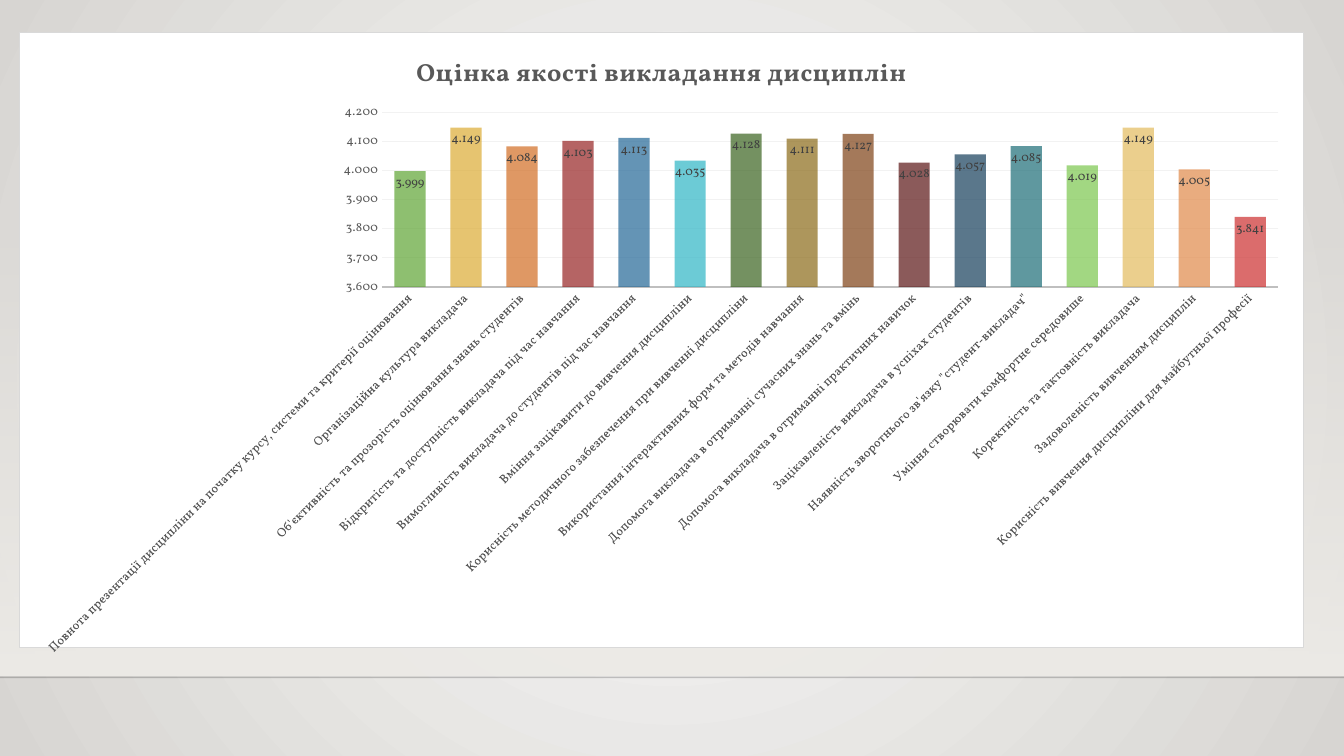
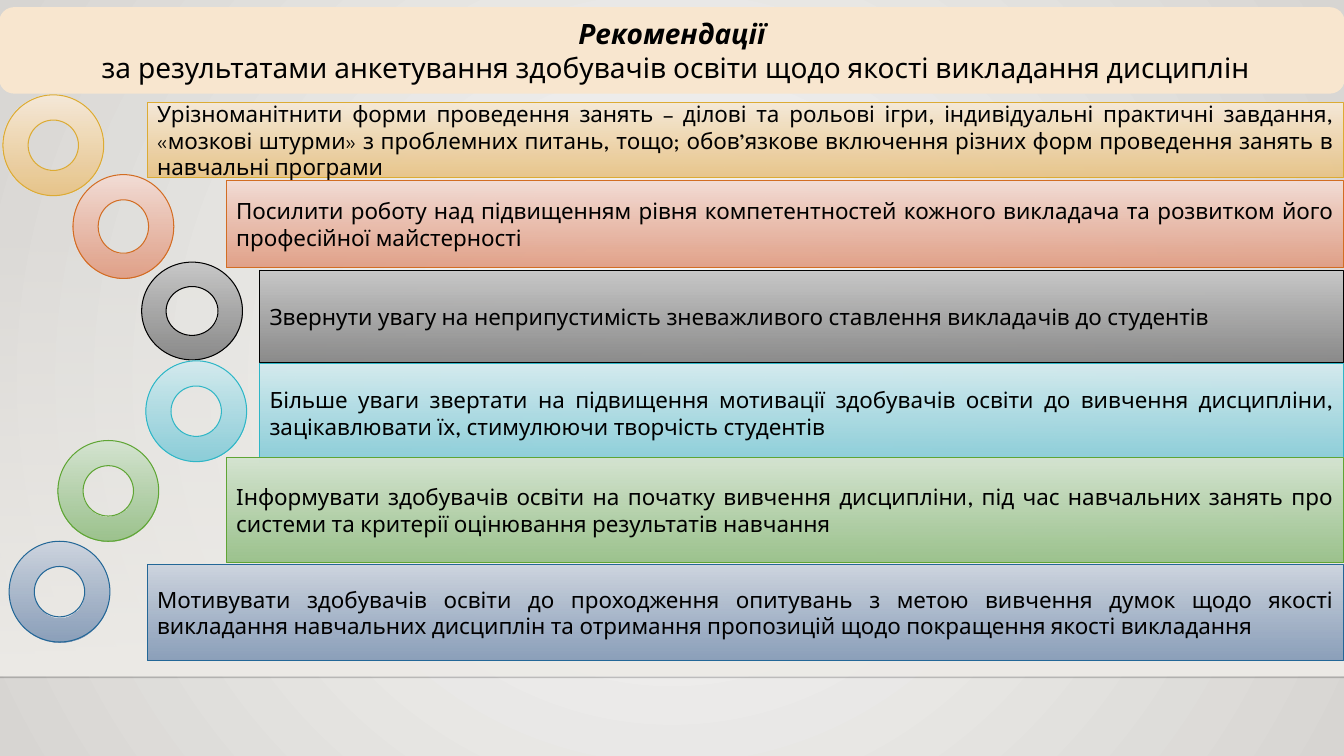
from lxml.etree import SubElement
from pptx import Presentation
from pptx.chart.data import CategoryChartData
from pptx.dml.color import RGBColor
from pptx.enum.chart import XL_CHART_TYPE, XL_LABEL_POSITION, XL_TICK_MARK
from pptx.enum.shapes import MSO_CONNECTOR, MSO_SHAPE
from pptx.enum.text import MSO_ANCHOR, MSO_AUTO_SIZE, PP_ALIGN
from pptx.oxml import parse_xml
from pptx.oxml.ns import nsdecls, qn
from pptx.util import Inches, Pt

WIDTH, HEIGHT = Inches(13.33), Inches(7.5)
CHART_FONT, TEXT_FONT = "Vollkorn", "League Spartan"
BLACK, GREY, HEADER = "000000", "595959", "F8E6CF"

RATINGS = [
    ("Повнота презентації дисципліни на початку курсу, системи та критерії оцінювання", 3.999, "5FA534"),
    ("Організаційна культура викладача", 4.149, "DCAB34"),
    ("Об'єктивність та прозорість оцінювання знань студентів", 4.084, "D26D23"),
    ("Відкритість та доступність викладача під час навчання", 4.103, "972323"),
    ("Вимогливість викладача до студентів під час навчання", 4.113, "236797"),
    ("Вміння зацікавити до вивчення дисципліни", 4.035, "2FB6C6"),
    ("Корисність методичного забезпечення при вивченні дисципліни", 4.128, "39631F"),
    ("Використання інтерактивних форм та методів навчання", 4.111, "8B6A18"),
    ("Допомога викладача в отриманні сучасних знань та вмінь", 4.127, "7E4115"),
    ("Допомога викладача в отриманні практичних навичок", 4.028, "5B1515"),
    ("Зацікавленість викладача в успіхах студентів", 4.057, "153E5B"),
    ("Наявність зворотнього зв'язку \"студент-викладач\"", 4.085, "1C6D77"),
    ("Уміння створювати комфортне середовише", 4.019, "7BC74D"),
    ("Коректність та тактовність викладача", 4.149, "E3BC5D"),
    ("Задоволеність вивченням дисциплін", 4.005, "E18949"),
    ("Корисність вивчення дисципліни для майбутньої професії", 3.841, "CC2F2F"),
]

ADVICE = [
    ("Урізноманітнити форми проведення занять – ділові та рольові ігри, індивідуальні практичні завдання, "
     "«мозкові штурми» з проблемних питань, тощо; обов’язкове включення різних форм проведення занять в "
     "навчальні програми",
     (10.95, 13.6, 9.87), (0.22, 12.55, 13.33), ("F6EAD9", "E8C385", "DCAB34")),
    ("Посилити роботу над підвищенням рівня компетентностей кожного викладача та розвитком його "
     "професійної майстерності",
     (16.84, 23.87, 11.47), (5.43, 23.1, 13.73), ("F3DDD6", "E19C82", "D26D23")),
    ("Звернути увагу на неприпустимість зневажливого ставлення викладачів до студентів",
     (19.32, 35.76, 12.24), (10.54, 34.67, 12.93), ("C8C8C8", "848484", BLACK)),
    ("Більше уваги звертати на підвищення мотивації здобувачів освіти до вивчення дисципліни, "
     "зацікавлювати їх, стимулюючи творчість студентів",
     (19.32, 48.13, 13.07), (10.85, 47.73, 13.33), ("D5EBEF", "85CCD8", "2FB6C6")),
    ("Інформувати здобувачів освіти на початку вивчення дисципліни, під час навчальних занять про "
     "системи та критерії оцінювання результатів навчання",
     (16.84, 60.53, 13.87), (4.31, 58.27, 13.33), ("D5E4D1", "96C087", "5FA534")),
    ("Мотивувати здобувачів освіти до проходження опитувань з метою вивчення думок щодо якості "
     "викладання навчальних дисциплін та отримання пропозицій щодо покращення якості викладання",
     (10.95, 74.67, 12.7), (0.68, 71.6, 13.33), ("CED5DF", "849AB7", "236797")),
]


def rgb(color):
    return RGBColor.from_string(color)


def box(x, y, w, h):
    return [int(v * side / 100) for v, side in ((x, WIDTH), (y, HEIGHT), (w, WIDTH), (h, HEIGHT))]


def set_line(line, color, width):
    line.color.rgb = rgb(color)
    line.width = Pt(width)


def set_font(font, name, size, color, bold=False, italic=False):
    font.name, font.size, font.bold, font.italic = name, Pt(size), bold, italic
    font.color.rgb = rgb(color)


def set_gradient(fill, start, end):
    fill.gradient()
    fill.gradient_angle = 270
    for stop, color in zip(fill.gradient_stops, (start, end)):
        stop.color.rgb = rgb(color)


def set_opacity(color_element, percent):
    SubElement(color_element, qn("a:alpha"), val=str(percent * 1000))


def colors_of(element):
    return list(element.iter(qn("a:srgbClr")))


def add_gradient_shape(s, kind, place, start, end):
    sp = s.shapes.add_shape(kind, *box(*place))
    sp.shadow.inherit = False
    set_gradient(sp.fill, start, end)
    return sp


def add_tinted_shape(s, kind, place, start, end, border):
    sp = add_gradient_shape(s, kind, place, start, end)
    set_opacity(colors_of(sp.element)[1], 92)
    set_line(sp.line, border, 0.75)
    return sp


def style_master(prs, s):
    master = prs.slide_master
    set_gradient(master.background.fill, "FAFAF9", "D7D5D2")
    lin = next(master.element.iter(qn("a:lin")))
    lin.getparent().replace(lin, parse_xml(
        f'<a:path {nsdecls("a")} path="circle">'
        '<a:fillToRect l="50000" t="50000" r="50000" b="50000"/></a:path>'))

    band = add_gradient_shape(s, MSO_SHAPE.RECTANGLE, (0, 29.33, 100, 60), "EDEBE7", "EDEBE7")
    band.line.fill.background()
    set_opacity(colors_of(band.element)[0], 0)

    x, y, w, h = box(0, 89.6, 100, 0)
    rule = s.shapes.add_connector(MSO_CONNECTOR.STRAIGHT, x, y, x + w, y + h)
    set_line(rule.line, "000001", 1)
    set_opacity(colors_of(rule.element)[0], 20)
    SubElement(rule.element.spPr, qn("a:effectLst"))

    for i, sp in enumerate((band, rule)):
        next(sp.element.iter(qn("p:cNvPr"))).set("id", str(100 + i))
        master.shapes.element.insert(2 + i, sp.element)


def style_axes(chart):
    cat, val = chart.category_axis, chart.value_axis
    for axis in (cat, val):
        axis.major_tick_mark = axis.minor_tick_mark = XL_TICK_MARK.NONE
        set_font(axis.tick_labels.font, CHART_FONT, 9, GREY)
    for props in chart.element.xpath("//c:catAx/c:txPr//a:defRPr | //c:valAx/c:txPr//a:defRPr"):
        props.set("spc", "20")
    chart.element.xpath("//c:catAx/c:txPr/a:bodyPr")[0].set("rot", "-2700000")
    set_line(cat.format.line, "BFBFBF", 1.25)
    val.minimum_scale, val.maximum_scale, val.major_unit = 3.6, 4.2, 0.1
    val.format.line.fill.background()
    set_line(val.major_gridlines.format.line, "F2F2F2", 0.75)
    val.tick_labels.number_format = "0.000"
    val.tick_labels.number_format_is_linked = False


def style_bars(plot):
    plot.gap_width, plot.overlap, plot.vary_by_categories = 80, 25, False
    for i, (_, _, color) in enumerate(RATINGS):
        fill = plot.series[0].points[i].format.fill
        fill.solid()
        fill.fore_color.rgb = rgb(color)
    plot.has_data_labels = True
    labels = plot.data_labels
    labels.show_value, labels.position = True, XL_LABEL_POSITION.INSIDE_END
    labels.number_format, labels.number_format_is_linked = "0.000", False
    set_font(labels.font, CHART_FONT, 9, "404040")


def add_rating_chart(s):
    data = CategoryChartData(number_format="0.000")
    data.categories = [name for name, _, _ in RATINGS]
    data.add_series("Series 1", [value for _, value, _ in RATINGS])
    frame = s.shapes.add_chart(XL_CHART_TYPE.COLUMN_CLUSTERED, *box(1.43, 4.27, 95.63, 82.53), data)
    chart = frame.chart
    set_font(chart.font, CHART_FONT, 10, BLACK)
    chart.has_legend = False
    chart.has_title = True
    p = chart.chart_title.text_frame.paragraphs[0]
    r = p.add_run()
    r.text = "Оцінка якості викладання дисциплін"
    set_font(r.font, CHART_FONT, 18, GREY, bold=True)
    next(chart.element.iter(qn("a:r"))).find(qn("a:rPr")).set("spc", "50")
    style_axes(chart)
    style_bars(chart.plots[0])
    for color in chart.element.xpath(".//c:dPt//a:srgbClr"):
        set_opacity(color, 70)
    chart.element.find(qn("c:chart")).addnext(parse_xml(
        f'<c:spPr {nsdecls("c", "a")}><a:solidFill><a:srgbClr val="FFFFFF"/></a:solidFill>'
        '<a:ln w="9525"><a:solidFill><a:srgbClr val="D9D9D9"/></a:solidFill></a:ln></c:spPr>'))


def add_header(s):
    title = s.shapes.title
    place = box(0, 1.07, 100, 11.2)
    panel = s.shapes.add_shape(MSO_SHAPE.ROUNDED_RECTANGLE, *place)
    panel.shadow.inherit = False
    panel.fill.solid()
    panel.fill.fore_color.rgb = rgb(HEADER)
    set_line(panel.line, HEADER, 1.25)
    title.element.addprevious(panel.element)

    title.left, title.top, title.width, title.height = place
    tf = title.text_frame
    tf.text = "Рекомендації\n за результатами анкетування здобувачів освіти щодо якості викладання дисциплін"
    tf.auto_size, tf.vertical_anchor = MSO_AUTO_SIZE.NONE, MSO_ANCHOR.MIDDLE
    for p, strong in zip(tf.paragraphs, (True, False)):
        p.alignment = PP_ALIGN.CENTER
        set_font(p.runs[0].font, TEXT_FONT, 20, BLACK, strong, strong)


def add_advice_bar(s, text, place, colors):
    x, y, h = place
    sp = add_tinted_shape(s, MSO_SHAPE.RECTANGLE, (x, y, 100 - x, h), *colors)
    tf = sp.text_frame
    tf.text = text
    tf.word_wrap, tf.vertical_anchor = True, MSO_ANCHOR.MIDDLE
    p = tf.paragraphs[0]
    p.alignment = PP_ALIGN.JUSTIFY
    set_font(p.runs[0].font, TEXT_FONT, 16, BLACK)


def add_ring(s, place, colors):
    x, y, h = place
    add_tinted_shape(s, MSO_SHAPE.DONUT, (x, y, 7.5, h), *colors)


def main():
    prs = Presentation()
    prs.slide_width, prs.slide_height = WIDTH, HEIGHT
    s = prs.slides.add_slide(prs.slide_layouts[6])
    style_master(prs, s)
    add_rating_chart(s)

    s = prs.slides.add_slide(prs.slide_layouts[5])
    add_header(s)
    for text, bar, _, colors in ADVICE:
        add_advice_bar(s, text, bar, colors)
    for _, _, ring, colors in ADVICE:
        add_ring(s, ring, colors)
    prs.save("out.pptx")


if __name__ == "__main__":
    main()
